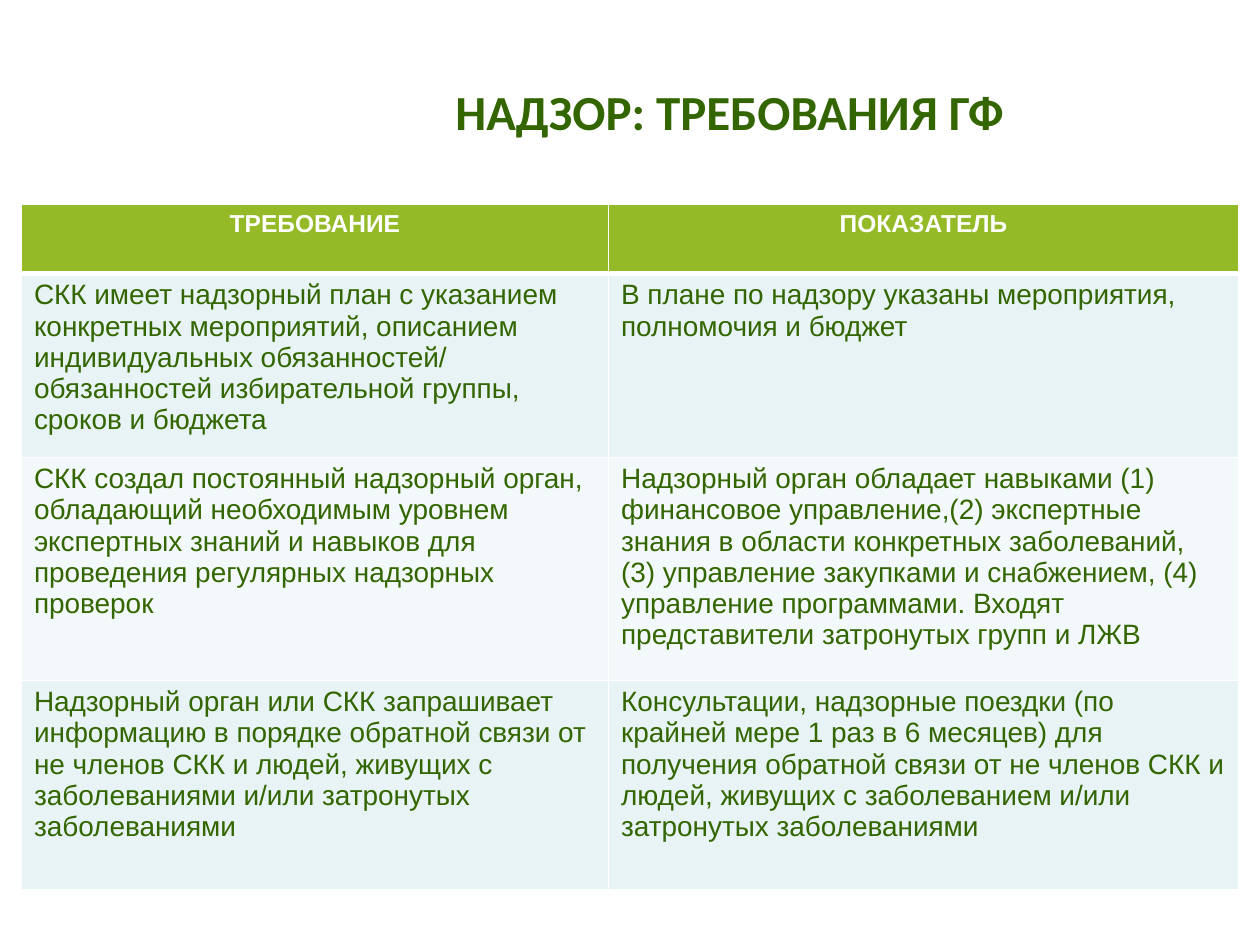
from lxml.etree import SubElement
from pptx import Presentation
from pptx.dml.color import RGBColor
from pptx.enum.text import MSO_ANCHOR, PP_ALIGN
from pptx.oxml.ns import qn
from pptx.util import Inches, Pt

TITLE = "НАДЗОР: ТРЕБОВАНИЯ ГФ"
ROWS = [
    ("ТРЕБОВАНИЕ", "ПОКАЗАТЕЛЬ"),
    ("СКК имеет надзорный план с указанием конкретных мероприятий, описанием "
     "индивидуальных обязанностей/ обязанностей избирательной группы, сроков и бюджета",
     "В плане по надзору указаны мероприятия, полномочия и бюджет"),
    ("СКК создал постоянный надзорный орган, обладающий необходимым уровнем "
     "экспертных знаний и навыков для проведения регулярных надзорных проверок",
     "Надзорный орган обладает навыками (1) финансовое управление,(2) экспертные "
     "знания в области конкретных заболеваний, (3) управление закупками и снабжением, "
     "(4) управление программами. Входят представители затронутых групп и ЛЖВ"),
    ("Надзорный орган или СКК запрашивает информацию в порядке обратной связи от "
     "не членов СКК и людей, живущих с заболеваниями и/или затронутых заболеваниями",
     "Консультации, надзорные поездки (по крайней мере 1 раз в 6 месяцев) для "
     "получения обратной связи от не членов СКК и людей, живущих с заболеванием "
     "и/или затронутых заболеваниями"),
]
WIDTHS = [4.66, 5]
HEIGHTS = [0.55, 1.46, 1.77, 1.66]
GREEN, WHITE, LIME = "336600", "FFFFFF", "94BA27"
BANDS = ["F3F9FA", "E7F3F4"]


def color(code):
    """Turn a hex string into a colour."""
    return RGBColor.from_string(code)


def style(para, face, size, code, bold, align):
    """Format a paragraph and its runs."""
    para.alignment = align
    for run in para.runs:
        font = run.font
        font.name, font.size, font.bold = face, Pt(size), bold
        font.color.rgb = color(code)


def border(cell, base):
    """Draw white lines round a cell, with the given bottom width."""
    props = cell._tc.get_or_add_tcPr()
    sides = [("lnL", 1), ("lnR", 1), ("lnT", 1), ("lnB", base)]
    for place, (side, width) in enumerate(sides):
        line = SubElement(props, qn("a:" + side), w=str(Pt(width)))
        fill = SubElement(line, qn("a:solidFill"))
        SubElement(fill, qn("a:srgbClr"), val=WHITE)
        props.insert(place, line)


def add_title(slide):
    """Place and format the title."""
    title = slide.shapes.title
    title.left, title.top = Inches(1.75), Inches(0.17)
    title.width, title.height = Inches(8.08), Inches(1.42)
    frame = title.text_frame
    frame.text = TITLE
    frame.vertical_anchor = MSO_ANCHOR.MIDDLE
    style(frame.paragraphs[0], "Calibri", 28, GREEN, True, PP_ALIGN.CENTER)


def add_grid(slide):
    """Add the table of requirements and indicators."""
    grid = slide.shapes.add_table(
        len(ROWS), len(WIDTHS), Inches(0.17), Inches(1.62),
        Inches(sum(WIDTHS)), Inches(sum(HEIGHTS))).table
    for col, width in zip(grid.columns, WIDTHS):
        col.width = Inches(width)
    for i, (row, texts) in enumerate(zip(grid.rows, ROWS)):
        row.height = Inches(HEIGHTS[i])
        head = i == 0
        for cell, text in zip(row.cells, texts):
            cell.text_frame.text = text
            cell.fill.solid()
            cell.fill.fore_color.rgb = color(LIME if head else BANDS[i % 2])
            border(cell, 3 if head else 1)
            look = (14, WHITE, True, PP_ALIGN.CENTER) if head else (
                16, GREEN, False, PP_ALIGN.LEFT)
            style(cell.text_frame.paragraphs[0], "Arial", *look)


def main():
    """Build and save the slide."""
    deck = Presentation()
    deck.slide_width, deck.slide_height = Inches(10), Inches(7.5)
    slide = deck.slides.add_slide(deck.slide_layouts[5])
    add_grid(slide)
    add_title(slide)
    deck.save("out.pptx")


if __name__ == "__main__":
    main()
